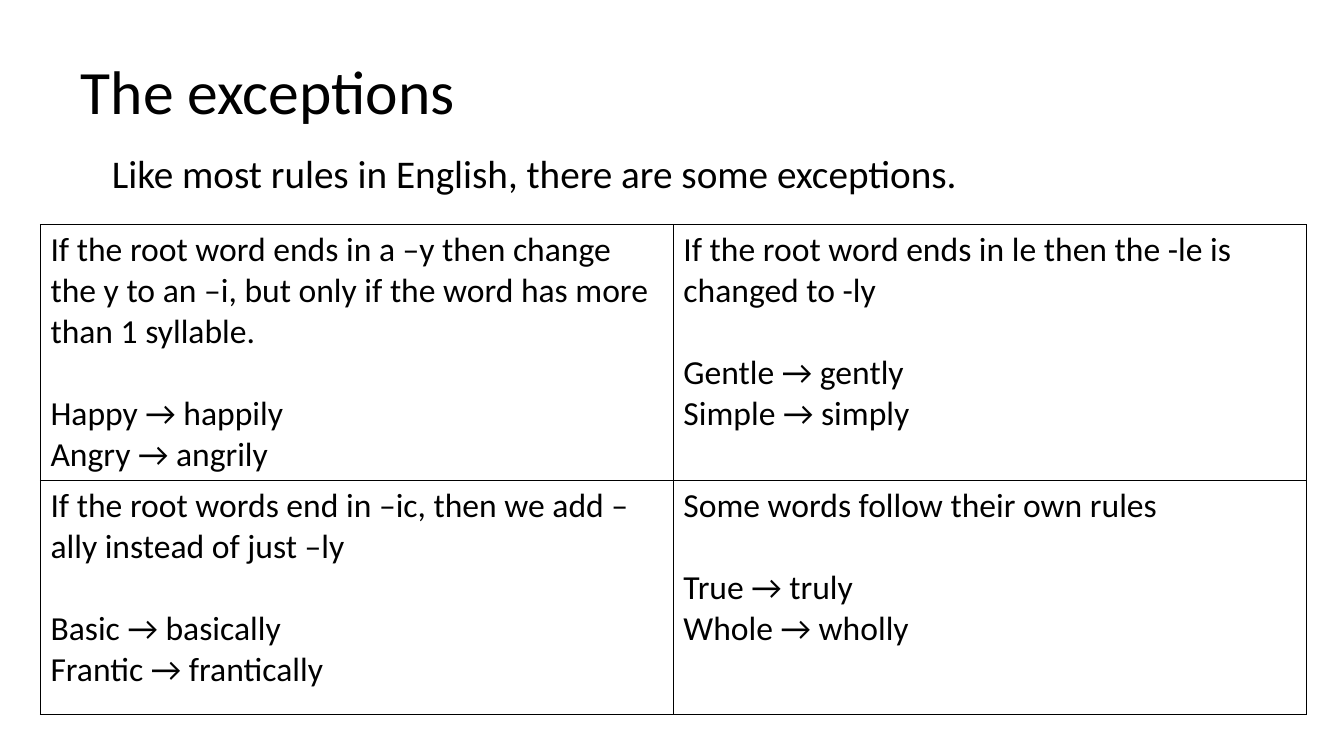
from lxml import etree
from pptx import Presentation
from pptx.dml.color import RGBColor
from pptx.enum.text import MSO_ANCHOR, MSO_AUTO_SIZE, PP_ALIGN
from pptx.oxml.ns import qn
from pptx.util import Cm, Pt

LEFT = PP_ALIGN.LEFT
TOP = MSO_ANCHOR.TOP
MIDDLE = MSO_ANCHOR.MIDDLE
NO_AUTOFIT = MSO_AUTO_SIZE.NONE
TITLE_ONLY = 5

FONT = "Calibri"
BLACK = "000000"
WHITE = "FFFFFF"
EXAMPLE_GAP = 29.3
COLUMN_WIDTH = Cm(15.95)
ROW_HEIGHTS = [Cm(6.45), Cm(5.89)]

RULES = [
    [
        ("If the root word ends in a –y then change the y to an –i, "
         "but only if the word has more than 1 syllable.",
         "Happy → happily", "Angry → angrily"),
        ("If the root word ends in le then the -le is changed to -ly",
         "Gentle → gently", "Simple → simply"),
    ],
    [
        ("If the root words end in –ic, then we add –ally instead of just –ly",
         "Basic → basically", "Frantic → frantically"),
        ("Some words follow their own rules",
         "True → truly", "Whole → wholly"),
    ],
]


def color(hex_string):
    """Return the colour for a hex string."""
    return RGBColor.from_string(hex_string)


def write_text(paragraph, text, size=24, line_spacing=1.0, space_before=0):
    """Write formatted text into a paragraph."""
    paragraph.alignment = LEFT
    paragraph.line_spacing = line_spacing
    paragraph.space_before = Pt(space_before)
    run = paragraph.add_run()
    run.text = text
    run.font.name = FONT
    run.font.size = Pt(size)
    run.font.color.rgb = color(BLACK)


def fill_frame(shape, text, size, anchor):
    """Write one line of text into a shape with a fixed size."""
    frame = shape.text_frame
    frame.word_wrap = True
    frame.auto_size = NO_AUTOFIT
    frame.vertical_anchor = anchor
    write_text(frame.paragraphs[0], text, size=size, line_spacing=0.9)


def add_title(slide, text):
    """Place and format the title placeholder."""
    title = slide.shapes.title
    title.left, title.top = Cm(1.78), Cm(0.53)
    title.width, title.height = Cm(29.21), Cm(3.68)
    fill_frame(title, text, 44, MIDDLE)


def add_introduction(slide, text):
    """Add the sentence above the table."""
    box = slide.shapes.add_textbox(Cm(2.57), Cm(3.76), Cm(29.21), Cm(1.6))
    fill_frame(box, text, 28, TOP)


def set_borders(cell, hex_string, width):
    """Draw a solid line on all four sides of a cell."""
    properties = cell._tc.get_or_add_tcPr()
    for position, side in enumerate(("a:lnL", "a:lnR", "a:lnT", "a:lnB")):
        line = etree.Element(qn(side), w=str(Pt(width)))
        fill = etree.SubElement(line, qn("a:solidFill"))
        etree.SubElement(fill, qn("a:srgbClr"), val=hex_string)
        properties.insert(position, line)


def fill_cell(cell, rule, examples):
    """Write a rule and its examples into a bordered cell."""
    cell.fill.solid()
    cell.fill.fore_color.rgb = color(WHITE)
    set_borders(cell, BLACK, 1)
    frame = cell.text_frame
    write_text(frame.paragraphs[0], rule)
    for index, example in enumerate(examples):
        gap = EXAMPLE_GAP if index == 0 else 0
        write_text(frame.add_paragraph(), example, space_before=gap)


def add_rule_table(slide, rules):
    """Add the table of spelling rules."""
    table = slide.shapes.add_table(
        len(rules), len(rules[0]), Cm(1.02), Cm(5.66),
        COLUMN_WIDTH * len(rules[0]), sum(ROW_HEIGHTS)).table
    table.first_row = False
    table.horz_banding = False
    for column in table.columns:
        column.width = COLUMN_WIDTH
    for row, height, row_rules in zip(table.rows, ROW_HEIGHTS, rules):
        row.height = height
        for cell, (rule, *examples) in zip(row.cells, row_rules):
            fill_cell(cell, rule, examples)


def main():
    """Build and save the slide."""
    presentation = Presentation()
    presentation.slide_width = Cm(33.87)
    presentation.slide_height = Cm(19.05)
    slide = presentation.slides.add_slide(presentation.slide_layouts[TITLE_ONLY])
    add_title(slide, "The exceptions")
    add_introduction(slide, "Like most rules in English, there are some exceptions.")
    add_rule_table(slide, RULES)
    presentation.save("out.pptx")


if __name__ == "__main__":
    main()
